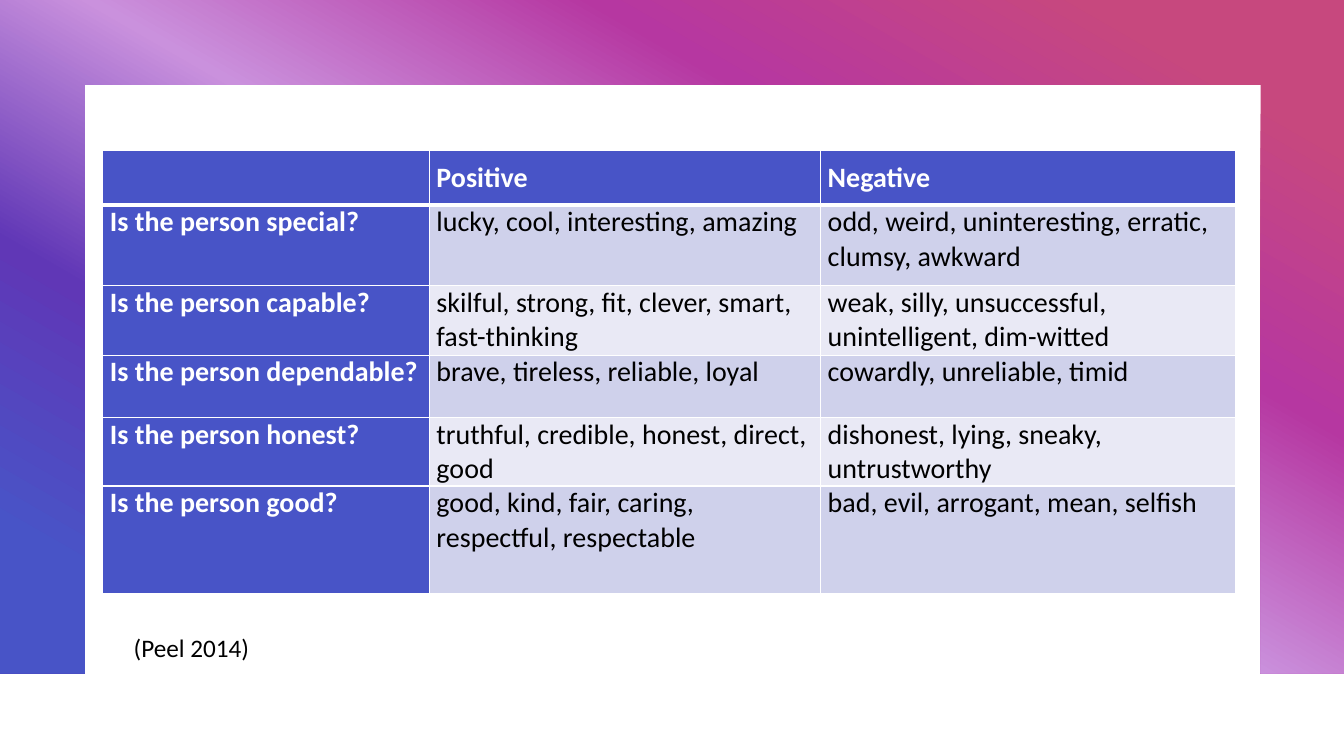
from lxml.etree import SubElement as Sub
from pptx import Presentation
from pptx.dml.color import RGBColor
from pptx.enum.text import MSO_ANCHOR as Anchor, MSO_AUTO_SIZE as Auto
from pptx.oxml.ns import qn
from pptx.util import Cm, Pt

WHITE = RGBColor(0xFF, 0xFF, 0xFF)
BLACK = RGBColor(0, 0, 0)
BLUE = RGBColor(0x48, 0x54, 0xC7)
LILAC = RGBColor(0xCF, 0xD1, 0xEB)
PALE = RGBColor(0xE9, 0xE9, 0xF5)
PINK = RGBColor(0xC7, 0x48, 0x7E)
PLUM = RGBColor(0xB6, 0x37, 0xA1)
MAUVE = RGBColor(0xCA, 0x91, 0xDD)
GRAPE = RGBColor(0x60, 0x37, 0xB6)

WIDE, HIGH = 33.87, 19.05
FRAME = [(0, 0), (WIDE, 0), (WIDE, 16.97), (31.77, 16.97),
         (31.77, 2.14), (2.14, 2.14), (2.14, 16.97), (0, 16.97)]
STOPS = [(10, PINK), (30, PLUM), (50, MAUVE), (70, GRAPE), (90, BLUE)]
COLS = [8.23, 9.86, 10.47]
ROWS = [1.37, 2.03, 1.75, 1.57, 1.57, 2.72]
WORDS = [
    ("", "Positive", "Negative"),
    ("Is the person special?", "lucky, cool, interesting, amazing",
     "odd, weird, uninteresting, erratic, clumsy, awkward"),
    ("Is the person capable?",
     "skilful, strong, fit, clever, smart, fast-thinking",
     "weak, silly, unsuccessful, unintelligent, dim-witted"),
    ("Is the person dependable?", "brave, tireless, reliable, loyal",
     "cowardly, unreliable, timid"),
    ("Is the person honest?", "truthful, credible, honest, direct, good",
     "dishonest, lying, sneaky, untrustworthy"),
    ("Is the person good?",
     "good, kind, fair, caring, respectful, respectable",
     "bad, evil, arrogant, mean, selfish"),
]


class Page:
    font = "Calibri"

    def __init__(self, slide):
        self.slide = slide

    def add_text(self, frame, text, size, color, bold=False):
        run = frame.paragraphs[0].add_run()
        run.text = text
        run.font.name = self.font
        run.font.size = Pt(size)
        run.font.bold = bold
        run.font.color.rgb = color

    def frame(self, points, stops, angle):
        first, *rest = [(Cm(x), Cm(y)) for x, y in points]
        pen = self.slide.shapes.build_freeform(*first)
        pen.add_line_segments(rest, close=True)
        shape = pen.convert_to_shape()
        shape.shadow.inherit = False
        shape.line.fill.background()
        shape.fill.gradient()
        shape.fill.gradient_angle = 360 - angle
        ramp = next(shape.element.iter(qn("a:gsLst")))
        for old in list(ramp):
            ramp.remove(old)
        for place, color in stops:
            stop = Sub(ramp, qn("a:gs"), pos=str(place * 1000))
            Sub(stop, qn("a:srgbClr"), val=str(color))

    def edge(self, cell, side, width):
        props = cell._tc.get_or_add_tcPr()
        line = Sub(props, qn(f"a:ln{side}"), w=str(Pt(width)))
        fill = Sub(line, qn("a:solidFill"))
        Sub(fill, qn("a:srgbClr"), val=str(WHITE))

    def cell(self, cell, text, row, col):
        head = row == 0
        lead = head or col == 0
        thick = {0: "B", 1: "T"}.get(row)
        for side in "LRTB":
            self.edge(cell, side, 3 if side == thick else 1)
        cell.fill.solid()
        cell.fill.fore_color.rgb = BLUE if lead else LILAC if row % 2 else PALE
        cell.margin_left = cell.margin_right = Cm(0.18)
        cell.margin_top = cell.margin_bottom = 0
        cell.vertical_anchor = Anchor.MIDDLE if head else Anchor.TOP
        if text:
            self.add_text(cell.text_frame, text, 20,
                          WHITE if lead else BLACK, lead)

    def table(self, left, top, cols, rows, words):
        grid = self.slide.shapes.add_table(
            len(rows), len(cols), Cm(left), Cm(top),
            Cm(sum(cols)), Cm(sum(rows))).table
        for col, width in zip(grid.columns, cols):
            col.width = Cm(width)
        for row, height in zip(grid.rows, rows):
            row.height = Cm(height)
        for r, line in enumerate(words):
            for c, text in enumerate(line):
                self.cell(grid.cell(r, c), text, r, c)

    def note(self, left, top, width, height, text):
        box = self.slide.shapes.add_textbox(
            Cm(left), Cm(top), Cm(width), Cm(height))
        box.text_frame.word_wrap = True
        box.text_frame.auto_size = Auto.SHAPE_TO_FIT_TEXT
        self.add_text(box.text_frame, text, 18, BLACK)


def main():
    deck = Presentation()
    deck.slide_width, deck.slide_height = Cm(WIDE), Cm(HIGH)
    page = Page(deck.slides.add_slide(deck.slide_layouts[6]))
    page.frame(FRAME, STOPS, 120)
    page.table(2.59, 3.8, COLS, ROWS, WORDS)
    page.note(3.12, 15.8, 4.09, 1.02, "(Peel 2014)")
    deck.save("out.pptx")


if __name__ == "__main__":
    main()
